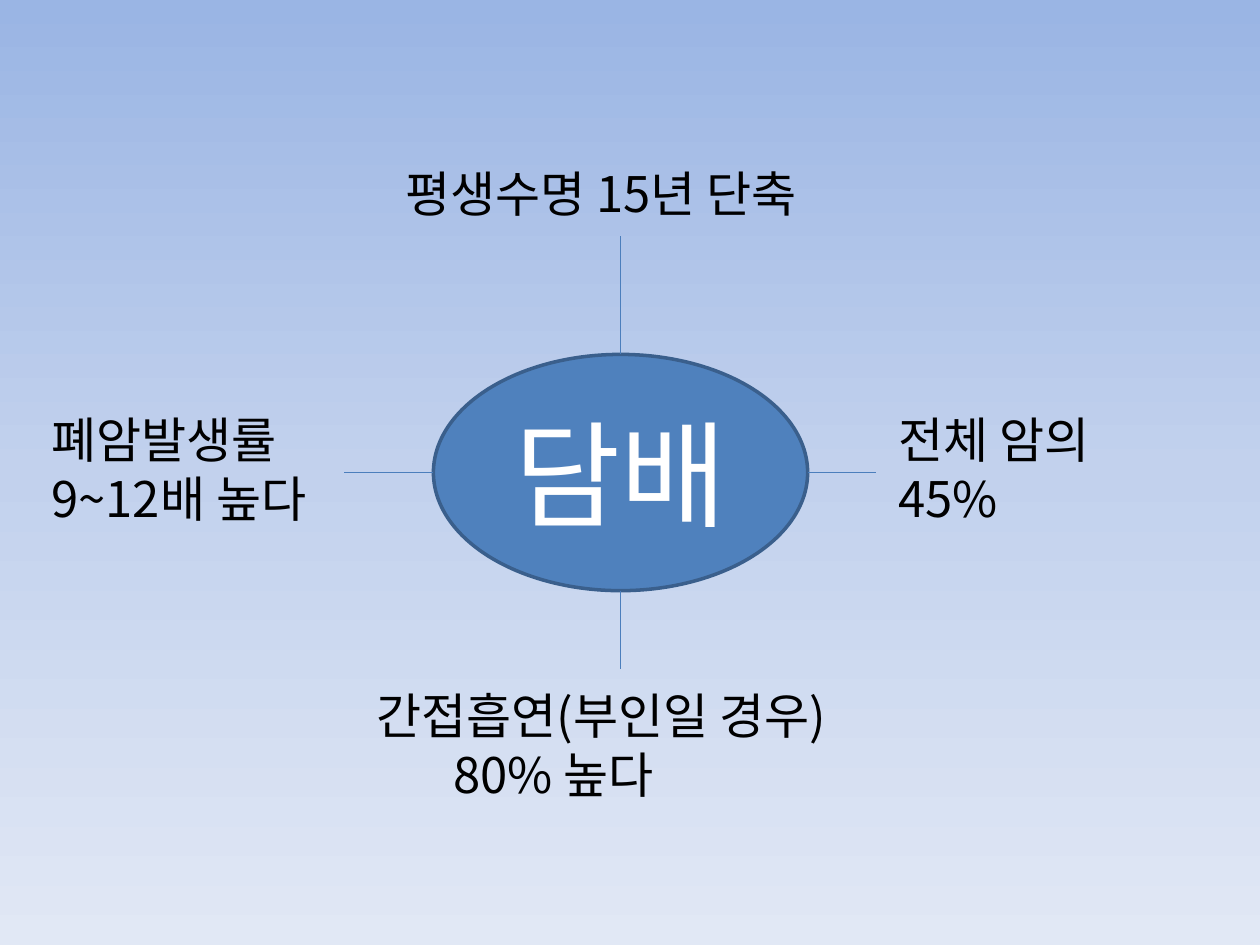
import copy
import pptx
import pptx.util
import pptx.dml.color
import pptx.enum.shapes
import pptx.enum.text
import pptx.oxml
import pptx.oxml.ns

FONT = "Noto Sans CJK KR"
HUES = {"oval": "4F81BD", "edge": "3A5F8C", "line": "4B7EBC",
        "hub": "FFFFFF", "note": "000000"}
SKY = [(0, "9AB5E4"), (0.5, "C2D1ED"), (1, "E1E8F5")]
WIDE, HIGH = 10, 7.5

HUB = "담배"
OVAL = (0.344, 0.375, 0.297, 0.25)  # left, top, width, height as shares
# box as shares of the slide, then paragraphs as (text, indent in inches)
NOTES = [
    ((0.312, 0.167, 0.375, 0.076), [("평생수명 15년 단축", 0)]),
    ((0.703, 0.427, 0.211, 0.139), [("전체 암의 45%", 0)]),
    ((0.031, 0.427, 0.258, 0.139), [("폐암발생률", 0), ("9~12배 높다", 0)]),
    ((0.289, 0.719, 0.406, 0.139),
     [("간접흡연(부인일 경우)", 0), ("80% 높다", 0.61)]),
]
# side of the oval (-1, 0 or 1 across and down), length as share
SPOKES = [(0, -1, 0.125), (1, 0, 0.054), (-1, 0, 0.071), (0, 1, 0.083)]


def tint(name):
    return pptx.dml.color.RGBColor.from_string(HUES.get(name, name))


def scale(x, y):
    return pptx.util.Inches(x * WIDE), pptx.util.Inches(y * HIGH)


def place(box):
    return scale(*box[:2]) + scale(*box[2:])


def add_run(para, text, size, hue):
    run = para.add_run()
    run.text = text
    run.font.size = pptx.util.Pt(size)
    run.font.name = FONT
    run.font.color.rgb = tint(hue)
    east = pptx.oxml.parse_xml(
        f'<a:ea {pptx.oxml.ns.nsdecls("a")} typeface="{FONT}"/>')
    run.font._element.append(east)


def add_sky(slide):
    """Fill the background with a gradient that runs from top to bottom."""
    fill = slide.background.fill
    fill.gradient()
    fill.gradient_angle = 270
    stops = slide.element.xpath(".//a:gsLst")[0]
    stops.insert(1, copy.deepcopy(stops[0]))
    for stop, (share, hue) in zip(fill.gradient_stops, SKY):
        stop.position = share
        stop.color.rgb = tint(hue)


def add_hub(slide):
    oval = slide.shapes.add_shape(
        pptx.enum.shapes.MSO_SHAPE.OVAL, *place(OVAL))
    oval.shadow.inherit = False
    oval.fill.solid()
    oval.fill.fore_color.rgb = tint("oval")
    oval.line.color.rgb = tint("edge")
    oval.line.width = pptx.util.Pt(2)
    oval.text_frame.vertical_anchor = pptx.enum.text.MSO_ANCHOR.MIDDLE
    para = oval.text_frame.paragraphs[0]
    para.alignment = pptx.enum.text.PP_ALIGN.CENTER
    add_run(para, HUB, 66, "hub")


def add_spoke(slide, across, down, size):
    left, top, width, height = OVAL
    x = left + width * (1 + across) / 2
    y = top + height * (1 + down) / 2
    line = slide.shapes.add_connector(
        pptx.enum.shapes.MSO_CONNECTOR.STRAIGHT,
        *scale(x, y), *scale(x + across * size, y + down * size))
    line.line.color.rgb = tint("line")
    line.line.width = pptx.util.Pt(0.75)
    line._element.spPr.append(pptx.oxml.parse_xml(
        f'<a:effectLst {pptx.oxml.ns.nsdecls("a")}/>'))


def add_note(slide, box, paras):
    frame = slide.shapes.add_textbox(*place(box)).text_frame
    frame.word_wrap = True
    frame.auto_size = pptx.enum.text.MSO_AUTO_SIZE.SHAPE_TO_FIT_TEXT
    for i, (text, indent) in enumerate(paras):
        para = frame.add_paragraph() if i else frame.paragraphs[0]
        if indent:
            para._p.get_or_add_pPr().set(
                "marL", str(pptx.util.Inches(indent)))
        add_run(para, text, 28, "note")


def main():
    deck = pptx.Presentation()
    deck.slide_width, deck.slide_height = scale(1, 1)
    slide = deck.slides.add_slide(deck.slide_layouts[6])
    add_sky(slide)
    add_hub(slide)
    for spoke in SPOKES:
        add_spoke(slide, *spoke)
    for box, paras in NOTES:
        add_note(slide, box, paras)
    deck.save("out.pptx")


if __name__ == "__main__":
    main()
